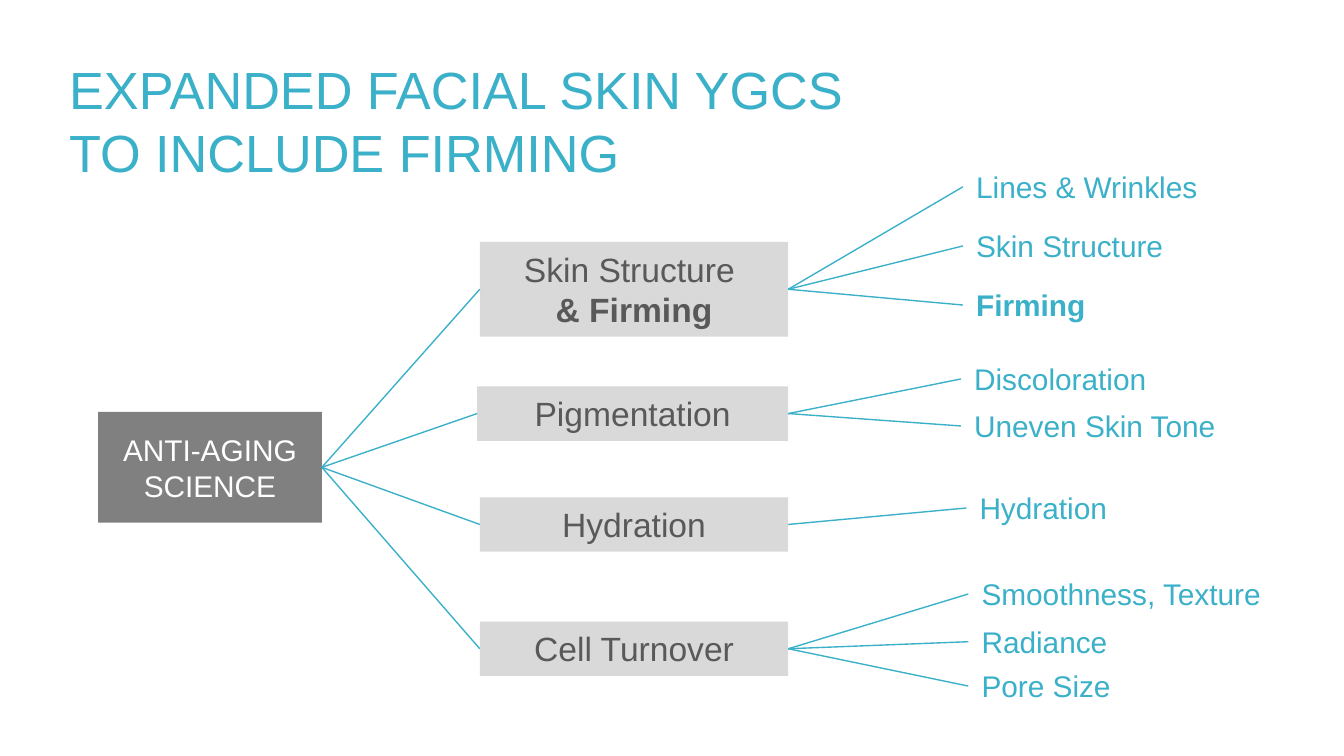
from lxml.etree import SubElement
from pptx import Presentation
from pptx.dml.color import RGBColor
from pptx.enum.shapes import MSO_CONNECTOR, MSO_SHAPE
from pptx.enum.text import MSO_ANCHOR, MSO_AUTO_SIZE, PP_ALIGN
from pptx.oxml.ns import qn
from pptx.util import Emu, Pt

TEAL, WHITE, DARK, MID, LIGHT = "3BB0C9", "FFFFFF", "595959", "808080", "D9D9D9"

# Each line of text is (wording, bold)
TITLE = [("EXPANDED FACIAL SKIN YGCS ", False), ("TO INCLUDE FIRMING", False)]
ROOT = [("ANTI-AGING SCIENCE", False)]
# Category lines, box left, top and height, benefit left, (benefit, bold, top)
CATEGORIES = [
    ([("Skin Structure ", False), ("& Firming", True)], 714, 360, 141, 1433,
     [("Lines & Wrinkles", False, 241), ("Skin Structure", False, 329),
      ("Firming", True, 417)]),
    ([("Pigmentation", False)], 710, 575, 81, 1430,
     [("Discoloration", False, 527), ("Uneven Skin Tone", False, 597)]),
    ([("Hydration", False)], 714, 740, 81, 1438, [("Hydration", False, 719)]),
    ([("Cell Turnover", False)], 714, 925, 81, 1441,
     [("Smoothness, Texture", False, 847), ("Radiance", False, 918),
      ("Pore Size", False, 984)]),
]

SLIDE_SIZE = (2000, 1125)
TITLE_BOX = (83, 104, 1804, 150)
ROOT_BOX = (146, 613, 333, 165)
CATEGORY_RIGHT = 1173
BENEFIT_W, BENEFIT_H = 520, 74


def px(n):
    """Convert px, at 200 to the inch, to EMU."""
    return Emu(round(n * 4572))


def color(value):
    return RGBColor.from_string(value)


def write(sp, lines, size=16, fill=TEAL, align=PP_ALIGN.LEFT, anchor=MSO_ANCHOR.TOP):
    tf = sp.text_frame
    tf.word_wrap = True
    tf.auto_size = MSO_AUTO_SIZE.NONE
    tf.vertical_anchor = anchor
    p = tf.paragraphs[0]
    p.alignment = align
    for i, (text, bold) in enumerate(lines):
        if i:
            p.add_line_break()
        r = p.add_run()
        r.text = text
        r.font.name = "Arial"
        r.font.size = Pt(size)
        r.font.bold = bold
        r.font.color.rgb = color(fill)


def add_box(slide, bounds, fill):
    sp = slide.shapes.add_shape(MSO_SHAPE.RECTANGLE, *map(px, bounds))
    sp.shadow.inherit = False
    sp.fill.solid()
    sp.fill.fore_color.rgb = color(fill)
    sp.line.fill.background()
    return sp


def add_branch(slide, start, end):
    line = slide.shapes.add_connector(
        MSO_CONNECTOR.STRAIGHT, *map(px, (*start, *end)))
    line.line.color.rgb = color(TEAL)
    line.line.width = Pt(0.75)
    SubElement(line._element.spPr, qn("a:effectLst"))


def main():
    prs = Presentation()
    prs.slide_width, prs.slide_height = map(px, SLIDE_SIZE)
    slide = prs.slides.add_slide(prs.slide_layouts[5])

    title = slide.shapes.title
    title.left, title.top, title.width, title.height = map(px, TITLE_BOX)
    write(title, TITLE, size=28, anchor=MSO_ANCHOR.MIDDLE)

    write(add_box(slide, ROOT_BOX, MID), ROOT, fill=WHITE,
          align=PP_ALIGN.CENTER, anchor=MSO_ANCHOR.MIDDLE)
    x, y, w, h = ROOT_BOX
    root_end = (x + w, y + h / 2)

    for lines, left, top, height, benefit_left, benefits in CATEGORIES:
        box = add_box(slide, (left, top, CATEGORY_RIGHT - left, height), LIGHT)
        write(box, lines, size=18, fill=DARK, align=PP_ALIGN.CENTER)
        middle = top + height / 2
        add_branch(slide, root_end, (left, middle))
        for text, bold, benefit_top in benefits:
            sp = slide.shapes.add_textbox(
                *map(px, (benefit_left, benefit_top, BENEFIT_W, BENEFIT_H)))
            write(sp, [(text, bold)])
            add_branch(slide, (CATEGORY_RIGHT, middle),
                       (benefit_left, benefit_top + BENEFIT_H / 2))

    prs.save("out.pptx")


if __name__ == "__main__":
    main()
